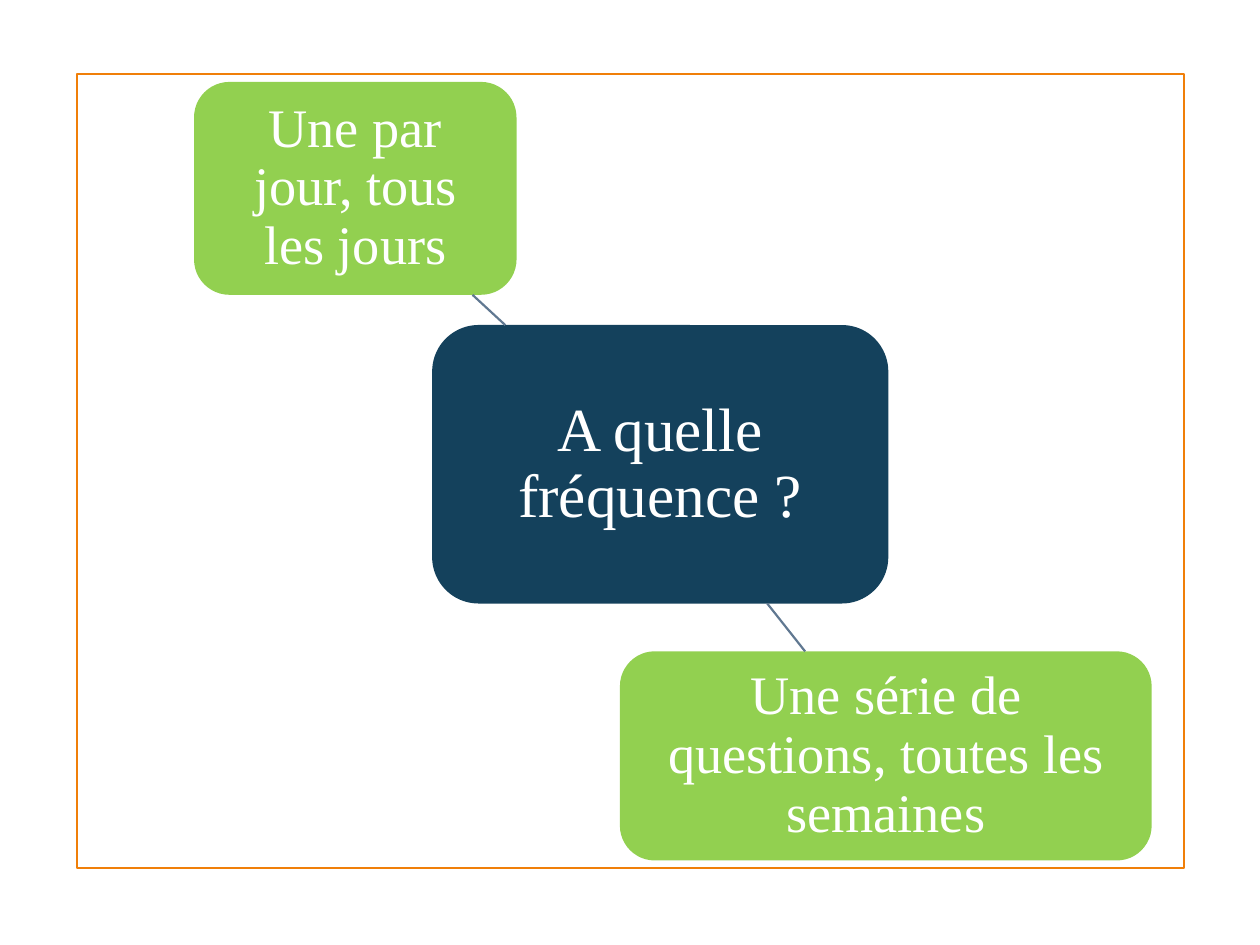
from typing import NamedTuple

from lxml.etree import SubElement
from pptx import Presentation
from pptx.dml.color import RGBColor
from pptx.enum.shapes import MSO_CONNECTOR, MSO_SHAPE
from pptx.enum.text import MSO_ANCHOR, PP_ALIGN
from pptx.oxml.ns import qn
from pptx.util import Inches, Pt

WIDTH, HEIGHT = 10, 7.5
FONT = "Times New Roman"
WHITE, ORANGE, NAVY, GREEN, SLATE = "FFFFFF", "F07F09", "14415C", "92D050", "607891"
LINE_WIDTH = Pt(1.25)


class Area(NamedTuple):
    """Left, top, width and height as percentages of the slide's size."""
    left: float
    top: float
    width: float
    height: float


class Bubble(NamedTuple):
    text: str
    area: Area
    fill: str
    size: int
    inset: float


class Link(NamedTuple):
    """Start and end points as percentages of the slide's size."""
    start: tuple[float, float]
    end: tuple[float, float]


FRAME = Area(6.1, 7.87, 87.9, 84)
BUBBLES = [
    Bubble("A quelle fréquence ?", Area(34.3, 34.4, 36.2, 29.47), NAVY, 35, 0.2),
    Bubble("Une par jour, tous les jours", Area(15.4, 8.67, 25.6, 22.53), GREEN, 31, 0.17),
    Bubble("Une série de questions, toutes les semaines",
           Area(49.2, 68.93, 42.2, 22.13), GREEN, 31, 0.17),
]
LINKS = [
    Link((40.1, 34.4), (37.5, 31.2)),
    Link((60.9, 63.87), (63.9, 68.93)),
]


def color(value: str) -> RGBColor:
    return RGBColor.from_string(value)


def across(share: float) -> int:
    return Inches(WIDTH * share / 100)


def down(share: float) -> int:
    return Inches(HEIGHT * share / 100)


def add_area(slide, kind, area: Area):
    shape = slide.shapes.add_shape(kind, across(area.left), down(area.top),
                                   across(area.width), down(area.height))
    shape.shadow.inherit = False
    return shape


def add_frame(slide) -> None:
    shape = add_area(slide, MSO_SHAPE.RECTANGLE, FRAME)
    shape.fill.background()
    shape.line.color.rgb = color(ORANGE)
    shape.line.width = LINE_WIDTH


def add_bubble(slide, bubble: Bubble) -> None:
    shape = add_area(slide, MSO_SHAPE.ROUNDED_RECTANGLE, bubble.area)
    shape.fill.solid()
    shape.fill.fore_color.rgb = color(bubble.fill)
    shape.line.fill.background()

    frame = shape.text_frame
    frame.text = bubble.text
    frame.word_wrap = True
    frame.vertical_anchor = MSO_ANCHOR.MIDDLE
    frame.margin_left = frame.margin_right = Inches(bubble.inset)
    frame.margin_top = frame.margin_bottom = Inches(bubble.inset)

    paragraph = frame.paragraphs[0]
    paragraph.alignment = PP_ALIGN.CENTER
    paragraph.line_spacing = 0.9
    font = paragraph.runs[0].font
    font.name = FONT
    font.size = Pt(bubble.size)
    font.color.rgb = color(WHITE)


def add_link(slide, link: Link) -> None:
    connector = slide.shapes.add_connector(
        MSO_CONNECTOR.STRAIGHT, across(link.start[0]), down(link.start[1]),
        across(link.end[0]), down(link.end[1]))
    connector.line.color.rgb = color(SLATE)
    connector.line.width = LINE_WIDTH
    SubElement(connector._element.spPr, qn("a:effectLst"))


def main() -> None:
    presentation = Presentation()
    presentation.slide_width = Inches(WIDTH)
    presentation.slide_height = Inches(HEIGHT)
    slide = presentation.slides.add_slide(presentation.slide_layouts[6])
    add_frame(slide)
    for bubble in BUBBLES:
        add_bubble(slide, bubble)
    for link in LINKS:
        add_link(slide, link)
    presentation.save("out.pptx")


if __name__ == "__main__":
    main()
